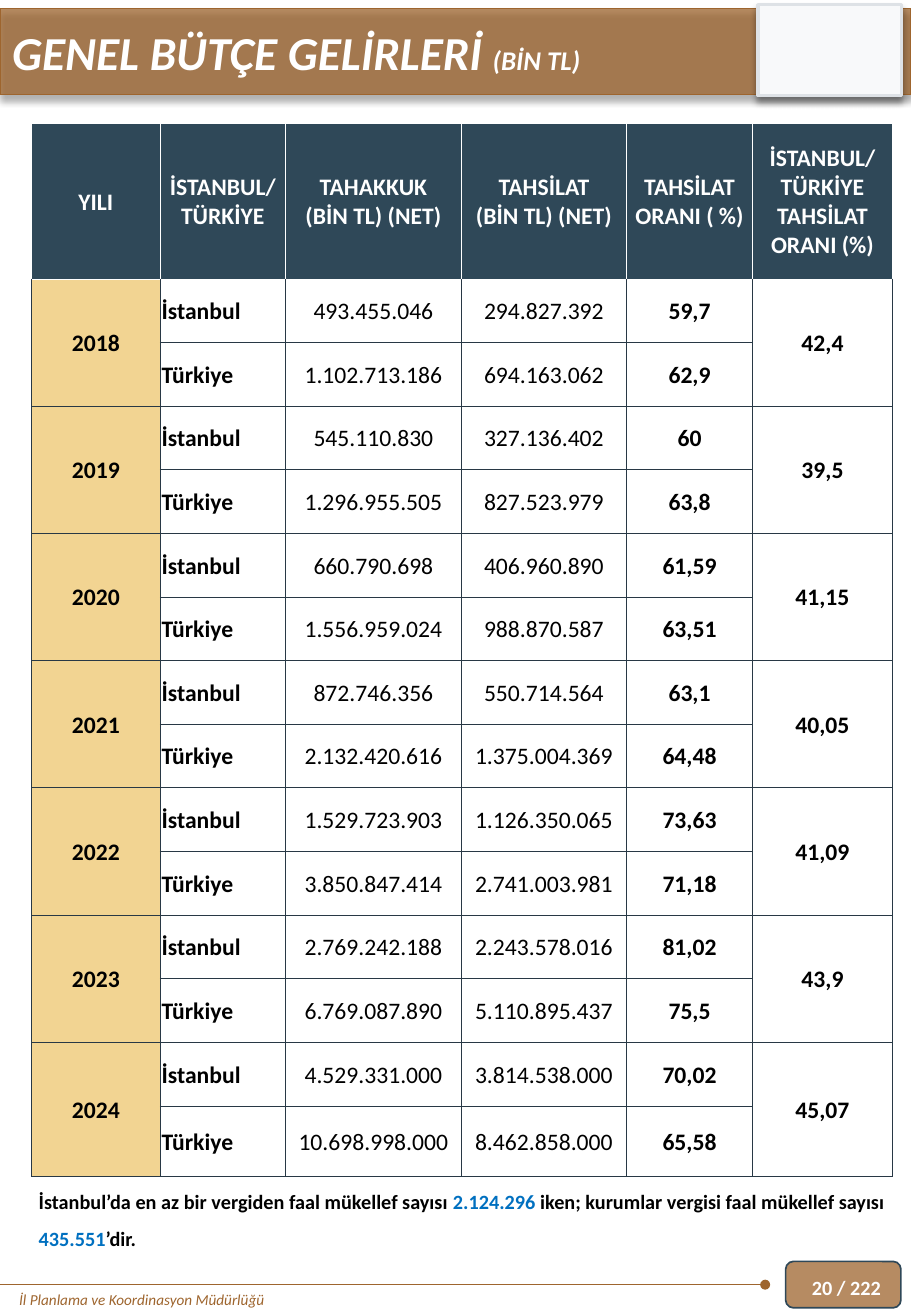
import pptx
import pptx.util
import pptx.dml.color
import pptx.enum.shapes
import pptx.enum.text
import pptx.oxml.ns
from lxml import etree

Cm, Pt = pptx.util.Cm, pptx.util.Pt
FORM = pptx.enum.shapes.MSO_SHAPE
ALIGN = pptx.enum.text.PP_ALIGN
ANCHOR = pptx.enum.text.MSO_ANCHOR
qn = pptx.oxml.ns.qn

HUES = {"brown": "9E652E", "navy": "2F4858", "grid": "283845", "sand": "F2D492",
        "white": "FFFFFF", "black": "000000", "blue": "0070C0",
        "pale": "F8F9FA", "edge": "DEE2E6"}

HEADS = [["YILI"], ["İSTANBUL/", "TÜRKİYE"], ["TAHAKKUK", "(BİN TL) (NET)"],
         ["TAHSİLAT", "(BİN TL) (NET)"], ["TAHSİLAT", "ORANI ( %)"],
         ["İSTANBUL/ TÜRKİYE TAHSİLAT ORANI (%)"]]
# Year, share, then accrual, collection and rate for the city and the country
YEARS = [
    ("2018", "42,4", ("493.455.046", "294.827.392", "59,7"),
     ("1.102.713.186", "694.163.062", "62,9")),
    ("2019", "39,5", ("545.110.830", "327.136.402", "60"),
     ("1.296.955.505", "827.523.979", "63,8")),
    ("2020", "41,15", ("660.790.698", "406.960.890", "61,59"),
     ("1.556.959.024", "988.870.587", "63,51")),
    ("2021", "40,05", ("872.746.356", "550.714.564", "63,1"),
     ("2.132.420.616", "1.375.004.369", "64,48")),
    ("2022", "41,09", ("1.529.723.903", "1.126.350.065", "73,63"),
     ("3.850.847.414", "2.741.003.981", "71,18")),
    ("2023", "43,9", ("2.769.242.188", "2.243.578.016", "81,02"),
     ("6.769.087.890", "5.110.895.437", "75,5")),
    ("2024", "45,07", ("4.529.331.000", "3.814.538.000", "70,02"),
     ("10.698.998.000", "8.462.858.000", "65,58")),
]


def hue(name):
    return pptx.dml.color.RGBColor.from_string(HUES[name])


def write(para, text, size, color, bold=False, slant=False):
    run = para.add_run()
    run.text = text
    font = run.font
    font.name, font.size, font.bold, font.italic = "Calibri", Pt(size), bold, slant
    font.color.rgb = hue(color)


def block(slide, form, box, fill, line=None, width=1, alpha=100, shade=False):
    """Add a filled shape, optionally see-through or with a soft shadow below."""
    shape = slide.shapes.add_shape(form, *map(Cm, box))
    shape.shadow.inherit = False
    shape.fill.solid()
    shape.fill.fore_color.rgb = hue(fill)
    props = shape.element.spPr
    if alpha < 100:
        tint = props.find(qn("a:solidFill"))[0]
        etree.SubElement(tint, qn("a:alpha"), val=str(alpha * 1000))
    if line:
        shape.line.color.rgb = hue(line)
        shape.line.width = Pt(width)
    else:
        shape.line.fill.background()
    if shade:
        glow = etree.SubElement(props.find(qn("a:effectLst")), qn("a:outerShdw"),
                                blurRad=str(Pt(4)), dist=str(Pt(3)),
                                dir="5400000", rotWithShape="0")
        tint = etree.SubElement(glow, qn("a:srgbClr"), val=HUES["black"])
        etree.SubElement(tint, qn("a:alpha"), val="40000")
    return shape


def label(slide, box, anchor=ANCHOR.TOP):
    """Add a wrapping text box and return its first paragraph."""
    frame = slide.shapes.add_textbox(*map(Cm, box)).text_frame
    frame.word_wrap = True
    frame.vertical_anchor = anchor
    return frame.paragraphs[0]


def banner(slide, box):
    left, top, wide, high = box
    block(slide, FORM.RECTANGLE, box, "brown", "brown", alpha=75, shade=True)
    block(slide, FORM.RECTANGLE, (left + wide - 3.2, top - 0.08, 3, high + 0.1),
          "pale", "edge", 2, shade=True)
    title = slide.shapes.title
    title.left, title.top, title.width, title.height = map(
        Cm, (left, top + 0.18, wide, high - 0.36))
    slide.shapes.element.append(title.element)
    frame = title.text_frame
    frame.vertical_anchor = ANCHOR.MIDDLE
    para = frame.paragraphs[0]
    para.alignment = ALIGN.LEFT
    write(para, "GENEL BÜTÇE GELİRLERİ ", 28, "white", True, True)
    write(para, "(BİN TL)", 16, "white", True, True)


def footer(slide, box):
    left, top, wide, high = box
    mid = top + high / 2
    badge = left + wide - 2.62
    block(slide, FORM.ROUNDED_RECTANGLE, (badge, top, 2.41, high), "brown", "navy", alpha=75)
    rule = slide.shapes.add_connector(pptx.enum.shapes.MSO_CONNECTOR.STRAIGHT,
                                      Cm(left + 16), Cm(mid), Cm(left), Cm(mid))
    rule.line.color.rgb = hue("brown")
    rule.line.width = Pt(0.5)
    props = rule.element.spPr
    etree.SubElement(props.find(qn("a:ln")), qn("a:headEnd"), type="oval")
    etree.SubElement(props, qn("a:effectLst"))
    write(label(slide, (left + 0.15, mid, 11.9, 0.64)),
          "İl Planlama ve Koordinasyon Müdürlüğü", 9, "brown", slant=True)
    write(label(slide, (badge + 0.3, top, 2.92, high + 0.1), ANCHOR.MIDDLE),
          "20 / 222", 12, "white", True)


def note(slide, box):
    frame = block(slide, FORM.RECTANGLE, box, "white").text_frame
    frame.word_wrap = True
    frame.vertical_anchor = ANCHOR.TOP
    para = frame.paragraphs[0]
    para.alignment = ALIGN.JUSTIFY
    para.line_spacing = 1.5
    for text, color in (("İstanbul’da en az bir vergiden faal mükellef sayısı ", "black"),
                        ("2.124.296 ", "blue"),
                        ("iken; kurumlar vergisi faal mükellef sayısı ", "black"),
                        ("435.551", "blue"), ("’dir.", "black")):
        write(para, text, 12, color, True)


def border(cell, sides):
    """Rule the four sides, given as colour names in the order L, R, T, B."""
    props = cell._tc.get_or_add_tcPr()
    for side, color in zip("LRTB", sides):
        line = etree.SubElement(props, qn("a:ln" + side), w=str(Pt(0.5)))
        fill = etree.SubElement(line, qn("a:solidFill"))
        etree.SubElement(fill, qn("a:srgbClr"), val=HUES[color])


def fill_cell(cell, lines, color="black", bold=True, align=ALIGN.CENTER):
    cell.vertical_anchor = ANCHOR.MIDDLE
    frame = cell.text_frame
    for i, text in enumerate(lines):
        para = frame.add_paragraph() if i else frame.paragraphs[0]
        para.alignment = align
        write(para, text, 14, color, bold)


def budget(slide, box):
    cols = (2.69, 2.62, 3.68, 3.45, 2.64, 2.92)
    rows = [3.25] + [1.33] * (2 * len(YEARS) - 1) + [1.48]
    grid = slide.shapes.add_table(len(rows), len(cols), *map(Cm, box)).table
    grid.first_row = grid.horz_banding = False
    for col, wide in zip(grid.columns, cols):
        col.width = Cm(wide)
    for r, high in enumerate(rows):
        grid.rows[r].height = Cm(high)
        for c in range(len(cols)):
            cell = grid.cell(r, c)
            cell.margin_left = cell.margin_right = cell.margin_top = Cm(0.03)
            cell.margin_bottom = 0
            side = "grid" if r else "white"
            border(cell, (side, side, "white" if r < 2 else "grid", side))
            if r and c:
                cell.fill.background()
            else:
                cell.fill.solid()
                cell.fill.fore_color.rgb = hue("sand" if r else "navy")
    for c, lines in enumerate(HEADS):
        fill_cell(grid.cell(0, c), lines, "white")
    for i, (year, share, *pair) in enumerate(YEARS):
        top = 1 + 2 * i
        for c, text in ((0, year), (5, share)):
            grid.cell(top, c).merge(grid.cell(top + 1, c))
            fill_cell(grid.cell(top, c), [text])
        for r, (place, sums) in enumerate(zip(("İstanbul", "Türkiye"), pair), top):
            fill_cell(grid.cell(r, 1), [place], align=ALIGN.JUSTIFY)
            for c, text in enumerate(sums, 2):
                fill_cell(grid.cell(r, c), [text], bold=c == 4)


def main():
    deck = pptx.Presentation()
    deck.slide_width, deck.slide_height = Cm(19.05), Cm(27.51)
    slide = deck.slides.add_slide(deck.slide_layouts[5])
    banner(slide, (0, 0.18, 19.05, 1.8))
    footer(slide, (0, 26.37, 19.05, 0.97))
    note(slide, (0.56, 24.49, 18.19, 1.8))
    budget(slide, (0.66, 2.58, 18, 22.02))
    deck.save("out.pptx")


if __name__ == "__main__":
    main()
